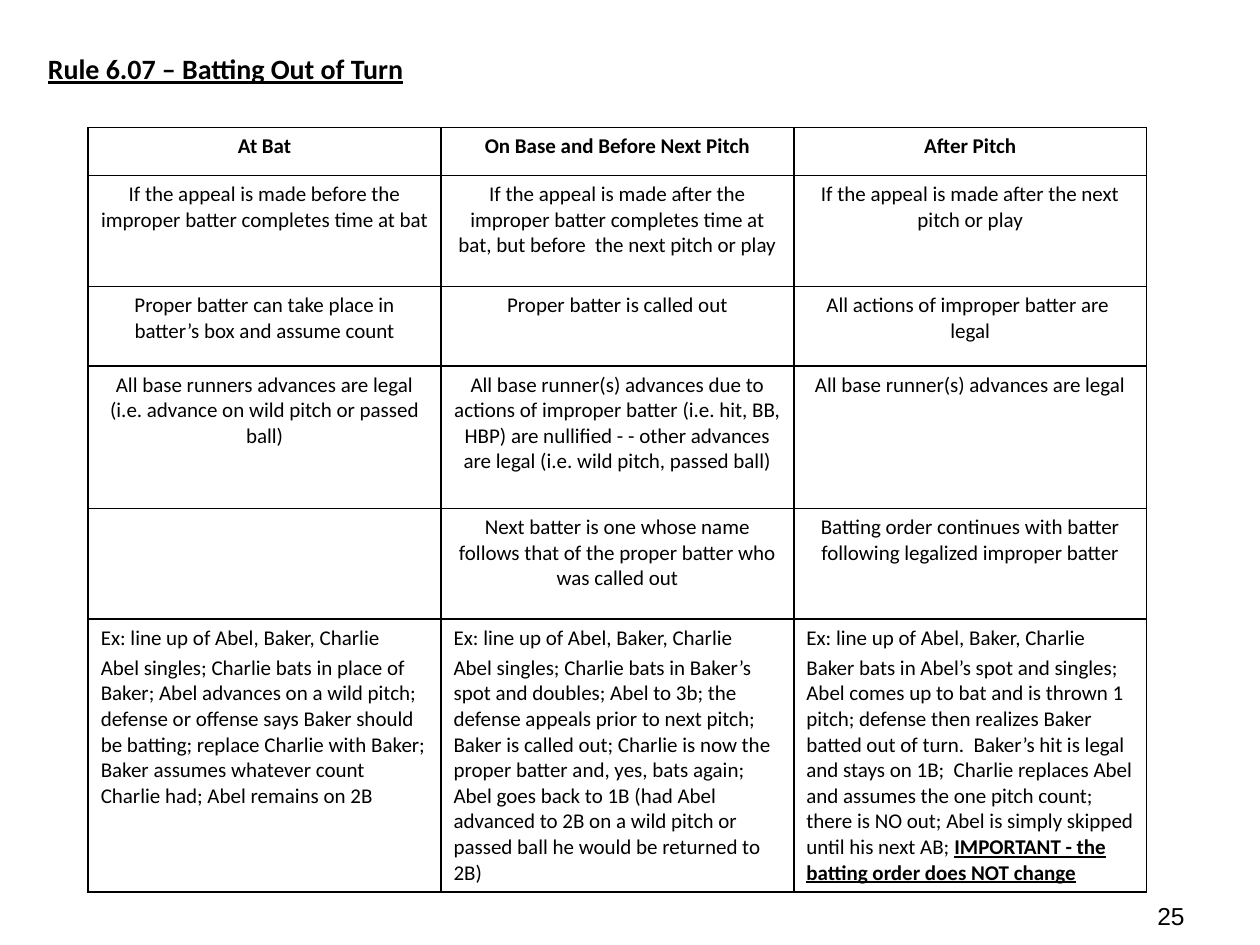
from lxml import etree
from pptx import Presentation
from pptx.dml.color import RGBColor
from pptx.enum.text import MSO_ANCHOR, PP_ALIGN
from pptx.oxml.ns import qn
from pptx.util import Pt

LEFT, CENTER, RIGHT = PP_ALIGN.LEFT, PP_ALIGN.CENTER, PP_ALIGN.RIGHT
TOP, MIDDLE = MSO_ANCHOR.TOP, MSO_ANCHOR.MIDDLE
COLORS = {"text": "000000", "border": "000000", "background": "FFFFFF"}

TITLE = "Rule 6.07 – Batting Out of Turn"
PAGE_NUMBER = "25"
LINEUP = "Ex: line up of Abel, Baker, Charlie"
EMPHASIS = "IMPORTANT - the batting order does NOT change"

# Each cell is a list of paragraphs.
HEADER = [["At Bat"], ["On Base and Before Next Pitch"], ["After Pitch"]]
RULINGS = [
    [["If the appeal is made before the improper batter completes time at bat"],
     ["If the appeal is made after the improper batter completes time at bat, "
      "but before  the next pitch or play"],
     ["If the appeal is made after the next pitch or play"]],
    [["Proper batter can take place in batter’s box and assume count"],
     ["Proper batter is called out"],
     ["All actions of improper batter are  legal"]],
    [["All base runners advances are legal",
      "(i.e. advance on wild pitch or passed ball)"],
     ["All base runner(s) advances due to actions of improper batter "
      "(i.e. hit, BB, HBP) are nullified - - other advances are legal "
      "(i.e. wild pitch, passed ball)"],
     ["All base runner(s) advances are legal"]],
    [[],
     ["Next batter is one whose name follows that of the proper batter "
      "who was called out"],
     ["Batting order continues with batter following legalized improper batter"]],
]
EXAMPLES = [
    [LINEUP,
     "Abel singles; Charlie bats in place of Baker; Abel advances on a wild "
     "pitch; defense or offense says Baker should be batting; replace Charlie "
     "with Baker; Baker assumes whatever count Charlie had; Abel remains on 2B"],
    [LINEUP,
     "Abel singles; Charlie bats in Baker’s spot and doubles; Abel to 3b; the "
     "defense appeals prior to next pitch; Baker is called out; Charlie is now "
     "the proper batter and, yes, bats again; Abel goes back to 1B (had Abel "
     "advanced to 2B on a wild pitch or passed ball he would be returned to 2B)"],
    [LINEUP,
     "Baker bats in Abel’s spot and singles; Abel comes up to bat and is thrown "
     "1 pitch; defense then realizes Baker batted out of turn.  Baker’s hit is "
     "legal and stays on 1B;  Charlie replaces Abel and assumes the one pitch "
     "count; there is NO out; Abel is simply skipped until his next AB; "],
]

TABLE_LEFT, TABLE_TOP, COLUMN_WIDTH = 50.4, 72.9, 201.6
ROW_HEIGHTS = [27.4, 63.4, 45.4, 81.4, 63.4, 155.5]


def format_run(run, size=12, font="Calibri", bold=False, underline=False):
    run.font.size = Pt(size)
    run.font.name = font
    run.font.bold = bold
    run.font.underline = underline
    run.font.color.rgb = RGBColor.from_string(COLORS["text"])


def write_text(frame, paragraphs, align=LEFT, anchor=TOP, gap=0, **run_format):
    frame.word_wrap = True
    frame.vertical_anchor = anchor
    for index, text in enumerate(paragraphs):
        paragraph = frame.add_paragraph() if index else frame.paragraphs[0]
        paragraph.alignment = align
        paragraph.space_before = Pt(gap if index else 0)
        run = paragraph.add_run()
        run.text = text
        format_run(run, **run_format)


def add_borders(cell, width=1):
    properties = cell._tc.get_or_add_tcPr()
    for side in ("lnL", "lnR", "lnT", "lnB"):
        line = etree.SubElement(properties, qn(f"a:{side}"), w=str(Pt(width)))
        fill = etree.SubElement(line, qn("a:solidFill"))
        etree.SubElement(fill, qn("a:srgbClr"), val=COLORS["border"])


def add_rulings_table(slide):
    rows = [HEADER, *RULINGS, EXAMPLES]
    table = slide.shapes.add_table(
        len(rows), len(HEADER), Pt(TABLE_LEFT), Pt(TABLE_TOP),
        Pt(COLUMN_WIDTH * len(HEADER)), Pt(sum(ROW_HEIGHTS))).table
    table.first_row = table.horz_banding = False
    for column in table.columns:
        column.width = Pt(COLUMN_WIDTH)
    for row_index, (row, height) in enumerate(zip(rows, ROW_HEIGHTS)):
        table.rows[row_index].height = Pt(height)
        for column_index, paragraphs in enumerate(row):
            cell = table.cell(row_index, column_index)
            add_borders(cell)
            cell.fill.solid()
            cell.fill.fore_color.rgb = RGBColor.from_string(COLORS["background"])
            is_example = row is EXAMPLES
            write_text(cell.text_frame, paragraphs,
                       align=LEFT if is_example else CENTER,
                       gap=2.4 if is_example else 0, bold=row is HEADER)
    last_paragraph = table.cell(len(rows) - 1, len(HEADER) - 1).text_frame.paragraphs[-1]
    emphasis = last_paragraph.add_run()
    emphasis.text = EMPHASIS
    format_run(emphasis, bold=True, underline=True)


def main():
    deck = Presentation()
    deck.slide_width, deck.slide_height = Pt(720), Pt(540)
    slide = deck.slides.add_slide(deck.slide_layouts[5])

    title = slide.shapes.title
    title.left, title.top, title.width, title.height = Pt(20.2), Pt(10.8), Pt(527), Pt(56.2)
    write_text(title.text_frame, [TITLE], anchor=MIDDLE, size=16, bold=True, underline=True)

    add_rulings_table(slide)

    page_number = slide.shapes.add_textbox(Pt(516.2), Pt(511.2), Pt(167.8), Pt(37.4))
    write_text(page_number.text_frame, [PAGE_NUMBER], align=RIGHT, size=14, font="Arial")

    deck.save("out.pptx")


if __name__ == "__main__":
    main()
